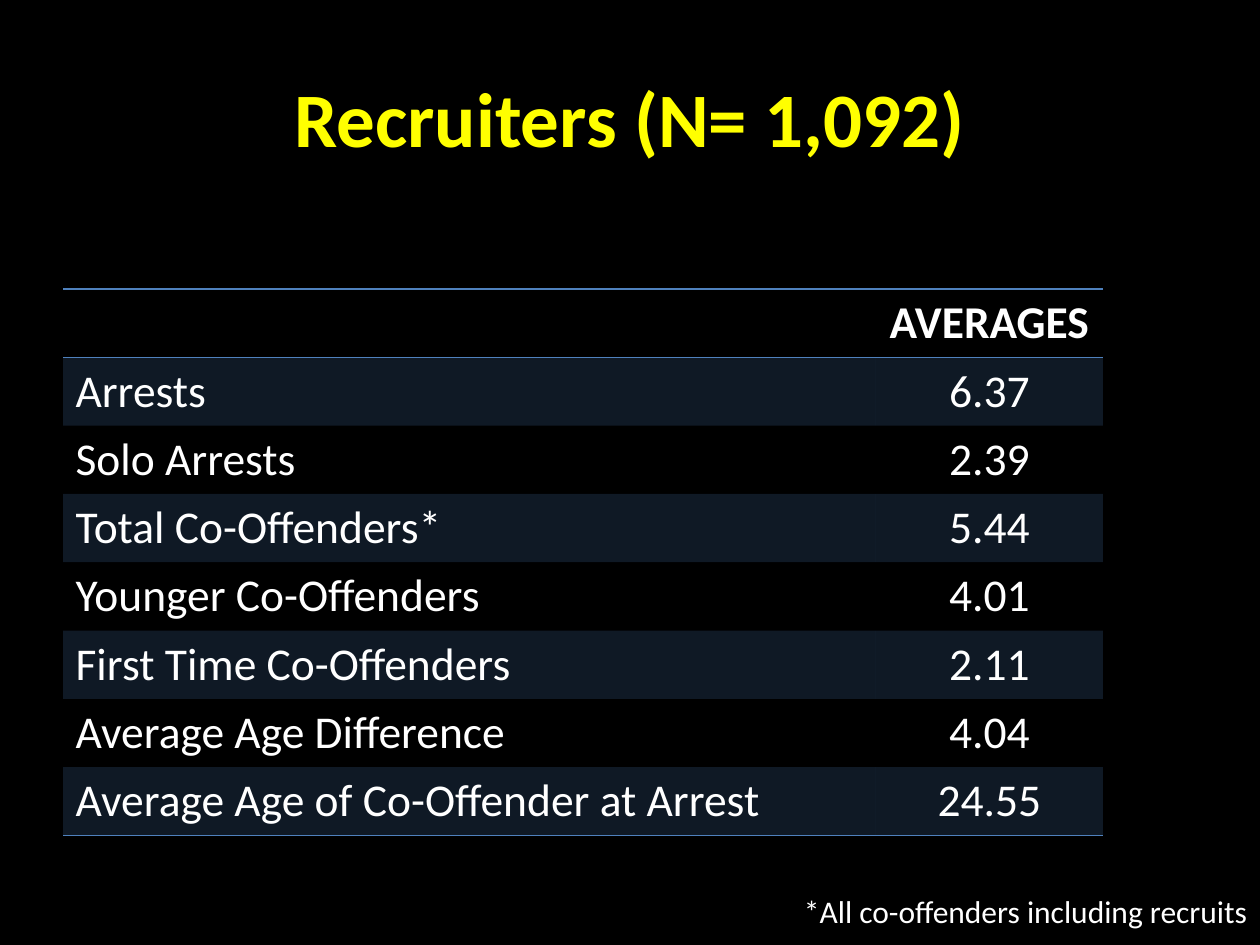
from dataclasses import dataclass

from lxml import etree
from pptx import Presentation
from pptx import util as u
from pptx.dml.color import RGBColor
from pptx.enum import text
from pptx.oxml.ns import qn


@dataclass(frozen=True)
class Theme:
    font: str = "Calibri"
    background: str = "000000"
    title: str = "FFFF00"
    body: str = "FFFFFF"
    accent: str = "4F81BD"
    band_alpha: int = 20
    title_size: int = 44
    table_size: int = 26
    note_size: int = 18


THEME = Theme()
PX_PER_INCH = 126
ROWS = [
    ("", "AVERAGES"),
    ("Arrests", "6.37"),
    ("Solo Arrests", "2.39"),
    ("Total Co-Offenders*", "5.44"),
    ("Younger Co-Offenders", "4.01"),
    ("First Time Co-Offenders", "2.11"),
    ("Average Age Difference", "4.04"),
    ("Average Age of Co-Offender at Arrest", "24.55"),
]


def px(n):
    return u.Emu(round(n * 914400 / PX_PER_INCH))


def write(tf, words, size, color, align, bold=False):
    p = tf.paragraphs[0]
    p.text = words
    p.alignment = align
    p.font.name = THEME.font
    p.font.size = u.Pt(size)
    p.font.bold = bold
    p.font.color.rgb = RGBColor.from_string(color)


def set_borders(cell, ruled_sides):
    tc_pr = cell._tc.get_or_add_tcPr()
    for i, side in enumerate("LRTB"):
        ln = etree.Element(qn(f"a:ln{side}"), w=str(u.Pt(1)))
        if side in ruled_sides:
            fill = etree.SubElement(ln, qn("a:solidFill"))
            etree.SubElement(fill, qn("a:srgbClr"), val=THEME.accent)
        else:
            etree.SubElement(ln, qn("a:noFill"))
        tc_pr.insert(i, ln)


def fill_band(cell):
    cell.fill.solid()
    cell.fill.fore_color.rgb = RGBColor.from_string(THEME.accent)
    color = cell._tc.tcPr.find(".//" + qn("a:srgbClr"))
    etree.SubElement(color, qn("a:alpha"), val=str(THEME.band_alpha * 1000))


def add_title(s, x, y, w, h):
    sp = s.shapes.title
    sp.left, sp.top, sp.width, sp.height = map(px, (x, y, w, h))
    sp.text_frame.vertical_anchor = text.MSO_ANCHOR.MIDDLE
    write(sp.text_frame, "Recruiters (N= 1,092)", THEME.title_size,
          THEME.title, text.PP_ALIGN.CENTER, True)


def add_averages_table(s, x, y, w, h):
    table = s.shapes.add_table(len(ROWS), 2, *map(px, (x, y, w, h))).table
    value_width = 227
    table.columns[0].width = px(w - value_width)
    table.columns[1].width = px(value_width)
    ruled_edges = {0, 1, len(ROWS)}
    aligns = (text.PP_ALIGN.LEFT, text.PP_ALIGN.CENTER)
    for i, row in enumerate(ROWS):
        sides = {side for side, edge in (("T", i), ("B", i + 1))
                 if edge in ruled_edges}
        for j, words in enumerate(row):
            cell = table.cell(i, j)
            write(cell.text_frame, words, THEME.table_size, THEME.body,
                  aligns[j], i == 0)
            if i % 2:
                fill_band(cell)
            else:
                cell.fill.background()
            set_borders(cell, sides)


def add_footnote(s, x, y, w, h):
    tf = s.shapes.add_textbox(*map(px, (x, y, w, h))).text_frame
    tf.word_wrap = True
    tf.auto_size = text.MSO_AUTO_SIZE.SHAPE_TO_FIT_TEXT
    write(tf, "*All co-offenders including recruits", THEME.note_size,
          THEME.body, text.PP_ALIGN.RIGHT)


def main():
    prs = Presentation()
    prs.slide_width, prs.slide_height = px(1260), px(945)
    s = prs.slides.add_slide(prs.slide_layouts[5])
    s.background.fill.solid()
    s.background.fill.fore_color.rgb = RGBColor.from_string(THEME.background)
    add_title(s, 63, 38, 1134, 158)
    add_averages_table(s, 63, 289, 1040, 544)
    add_footnote(s, 620, 886, 640, 51)
    prs.save("out.pptx")


if __name__ == "__main__":
    main()
